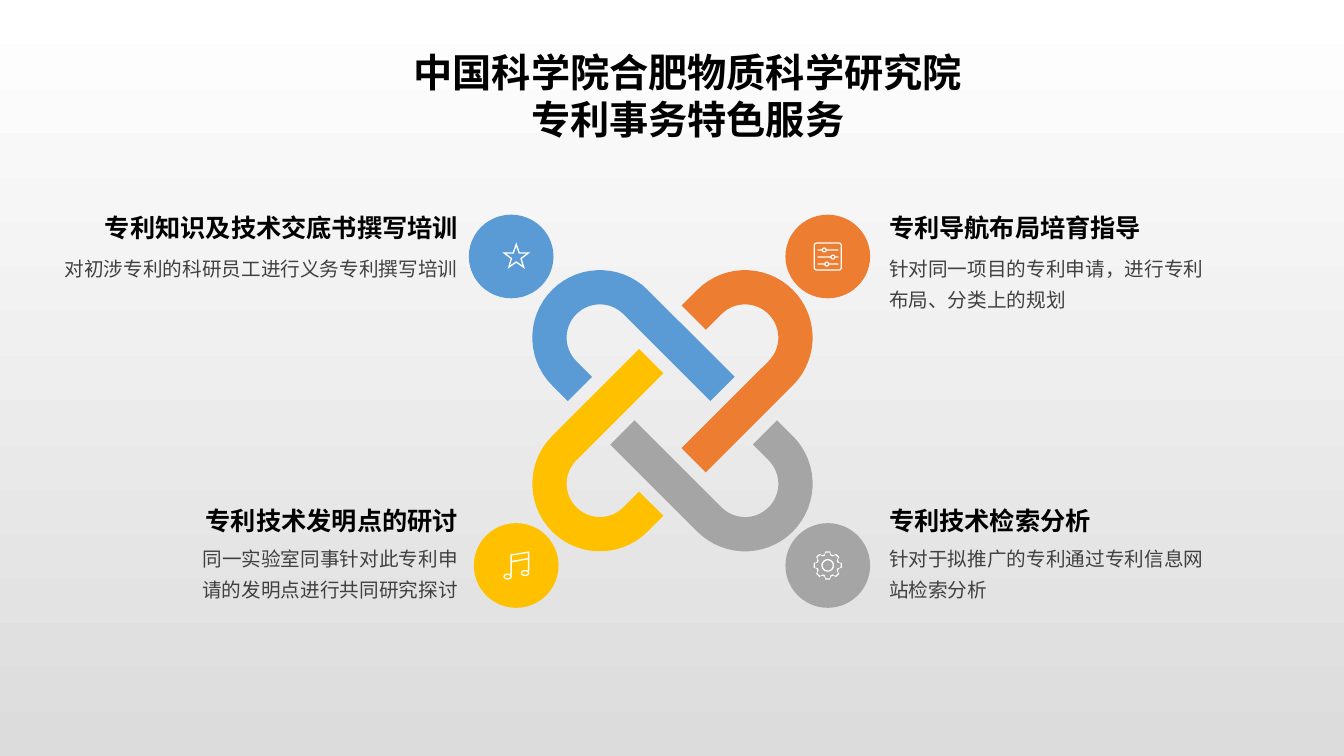
from math import cos, radians, sin

from lxml import etree
from pptx import Presentation
from pptx.dml.color import RGBColor
from pptx.enum.shapes import MSO_SHAPE
from pptx.enum.text import PP_ALIGN
from pptx.oxml.ns import qn
from pptx.util import Inches, Pt

LEFT, CENTER, RIGHT = PP_ALIGN.LEFT, PP_ALIGN.CENTER, PP_ALIGN.RIGHT
OVAL = MSO_SHAPE.OVAL

FONT = "Noto Sans CJK SC"
COLORS = {
    "blue": "5B9BD5", "orange": "ED7D31", "gray": "A5A5A5", "yellow": "FFC000",
    "white": "FFFFFF", "base": "DCDCDC", "title": "000000", "body": "404040",
}
ICON = 28  # side of the icon grid, in hundredths of an inch


def rgb(name):
    return RGBColor.from_string(COLORS[name])


def polar(cx, cy, radius, angle):
    """Point at an angle in degrees, clockwise from the right."""
    return cx + radius * cos(radians(angle)), cy + radius * sin(radians(angle))


def paint(sp, color):
    sp.shadow.inherit = False
    sp.fill.solid()
    sp.fill.fore_color.rgb = rgb(color)
    sp.line.fill.background()


def add_outline(s, contours, color):
    """One filled freeform; a contour inside another one cuts a hole."""
    builder = None
    for contour in contours:
        start, *rest = [(Inches(x), Inches(y)) for x, y in contour]
        if builder:
            builder.move_to(*start)
        else:
            builder = s.shapes.build_freeform(*start)
        builder.add_line_segments(rest, close=True)
    paint(builder.convert_to_shape(), color)


def add_text(s, box, text, size, color, align=LEFT, bold=False, wrap=True, spacing=None):
    tf = s.shapes.add_textbox(*map(Inches, box)).text_frame
    tf.word_wrap = wrap
    tf.text = text
    for p in tf.paragraphs:
        p.alignment = align
        p.line_spacing = spacing
        for r in p.runs:
            r.font.size, r.font.bold, r.font.name = Pt(size), bold, FONT
            r.font.color.rgb = rgb(color)
            ea = etree.SubElement(r._r.get_or_add_rPr(), qn("a:ea"))
            ea.set("typeface", FONT)


def draw_hook(s, cx, cy, turn, color):
    """Bent band: a long arm pointing along turn, a half ring and a short arm."""
    outer, inner, long_arm, short_arm = 0.67, 0.33, 1.22, 0.22
    sweep = range(turn - 90, turn - 271, -6)

    def arm_end(radius, side, length):
        return polar(*polar(cx, cy, radius, side), length, turn)

    points = [arm_end(outer, turn - 90, long_arm)]
    points += [polar(cx, cy, outer, a) for a in sweep]
    points += [arm_end(r, turn - 270, short_arm) for r in (outer, inner)]
    points += [polar(cx, cy, inner, a) for a in reversed(sweep)]
    points.append(arm_end(inner, turn - 90, long_arm))
    add_outline(s, [points], color)


def draw_knot(s, x, y, dx, dy):
    """Four hooks, each a quarter turn on from the one before."""
    centers = {"blue": (x, y), "orange": (x + dx, y),
               "gray": (x + dx, y + dy), "yellow": (x, y + dy)}
    for i, (color, center) in enumerate(centers.items()):
        draw_hook(s, *center, 45 + 90 * i, color)


def ellipse(cx, cy, rx, ry):
    return [(cx + rx * cos(radians(a)), cy + ry * sin(radians(a)))
            for a in range(0, 360, 15)]


def rectangle(x1, y1, x2, y2):
    return [(x1, y1), (x2, y1), (x2, y2), (x1, y2)]


def rounded_square(inset, radius):
    near, far = inset + radius, ICON - inset - radius
    corners = ((far, far), (near, far), (near, near), (far, near))
    return [polar(*corner, radius, 90 * i + a)
            for i, corner in enumerate(corners) for a in range(0, 91, 15)]


def star_icon():
    return [[polar(14, 14.5, size * (1 if i % 2 == 0 else 0.4), 36 * i - 90)
             for i in range(10)] for size in (14.5, 10.5)]


def sliders_icon():
    contours = [rounded_square(0, 3), rounded_square(1.2, 1.8)]
    for row, knob in ((7.5, 10.5), (14.5, 19), (21.5, 13)):
        contours += [ellipse(knob, row, r, r) for r in (2.5, 1.3)]
        contours += [rectangle(x1, row - 0.6, x2, row + 0.6)
                     for x1, x2 in ((4, knob - 2.5), (knob + 2.5, 24.5))]
    return contours


def note_icon():
    frame = [(7.2, 3), (26, 0), (26, 19.5), (24.6, 19.5), (24.6, 8),
             (8.6, 11), (8.6, 23), (7.2, 23)]
    beam = [(8.6, 4.2), (24.6, 1.6), (24.6, 6.6), (8.6, 9.4)]
    heads = [ellipse(*center, rx, ry) for center in ((4.5, 25), (21.8, 21.5))
             for rx, ry in ((4.2, 3), (2.9, 1.7))]
    return [frame, beam] + heads


def gear_icon():
    tooth = ((-16, 11.5), (-9, 14.2), (9, 14.2), (16, 11.5))
    rims = [[polar(14, 14, r - inset, a + da) for a in range(0, 360, 45)
             for da, r in tooth] for inset in (0, 1.3)]
    return rims + [ellipse(14, 14, r, r) for r in (6.3, 5)]


def draw_badge(s, x, y, height, icon_x, icon, color):
    paint(s.shapes.add_shape(OVAL, *map(Inches, (x, y, 0.84, height))), color)
    icon_y = y + (height - ICON / 100) / 2
    add_outline(s, [[(icon_x + px / 100, icon_y + py / 100) for px, py in contour]
                    for contour in icon()], "white")


def draw_service(s, edge, y, widths, gap, height, align, heading, body):
    """Heading over body text; edge is the side that faces the knot."""
    boxes = [(edge - w if align == RIGHT else edge, w) for w in widths]
    (head_x, head_w), (body_x, body_w) = boxes
    add_text(s, (head_x, y, head_w, 0.4), heading, 18, "title", align, True, False)
    add_text(s, (body_x, y + gap, body_w, height), body, 14, "body", align, spacing=1.3)


def set_background(s):
    fill = s.background.fill
    fill.gradient()
    fill.gradient_angle = 270
    for stop, color, position in zip(fill.gradient_stops, ("white", "base"), (0, 1)):
        stop.color.rgb = rgb(color)
        stop.position = position


def main():
    prs = Presentation()
    prs.slide_width, prs.slide_height = Inches(13.33), Inches(7.5)
    s = prs.slides.add_slide(prs.slide_layouts[6])
    set_background(s)
    add_text(s, (3.79, 0.43, 6.06, 1.04), "中国科学院合肥物质科学研究院\n专利事务特色服务",
             28, "title", CENTER, True)
    draw_knot(s, 5.95, 3.35, 1.44, 1.45)

    top, bottom = (2.13, 0.83), (5.19, 0.84)
    draw_badge(s, 4.65, *top, 4.98, star_icon, "blue")
    draw_badge(s, 7.79, *top, 8.07, sliders_icon, "orange")
    draw_badge(s, 4.7, *bottom, 4.99, note_icon, "yellow")
    draw_badge(s, 7.79, *bottom, 8.07, gear_icon, "gray")

    left, right = 4.64, 8.72
    upper, lower = (2.06, 0.37, 0.68), (4.96, 0.35, 0.71)
    services = [
        (left, upper, (3.74, 4.18), RIGHT, "专利知识及技术交底书撰写培训",
         "对初涉专利的科研员工进行义务专利撰写培训"),
        (right, upper, (2.73, 3.47), LEFT, "专利导航布局培育指导",
         "针对同一项目的专利申请，进行专利布局、分类上的规划"),
        (left, lower, (2.73, 2.82), RIGHT, "专利技术发明点的研讨",
         "同一实验室同事针对此专利申请的发明点进行共同研究探讨"),
        (right, lower, (2.22, 3.47), LEFT, "专利技术检索分析",
         "针对于拟推广的专利通过专利信息网站检索分析"),
    ]
    for edge, (y, gap, height), widths, align, heading, body in services:
        draw_service(s, edge, y, widths, gap, height, align, heading, body)
    prs.save("out.pptx")


if __name__ == "__main__":
    main()
